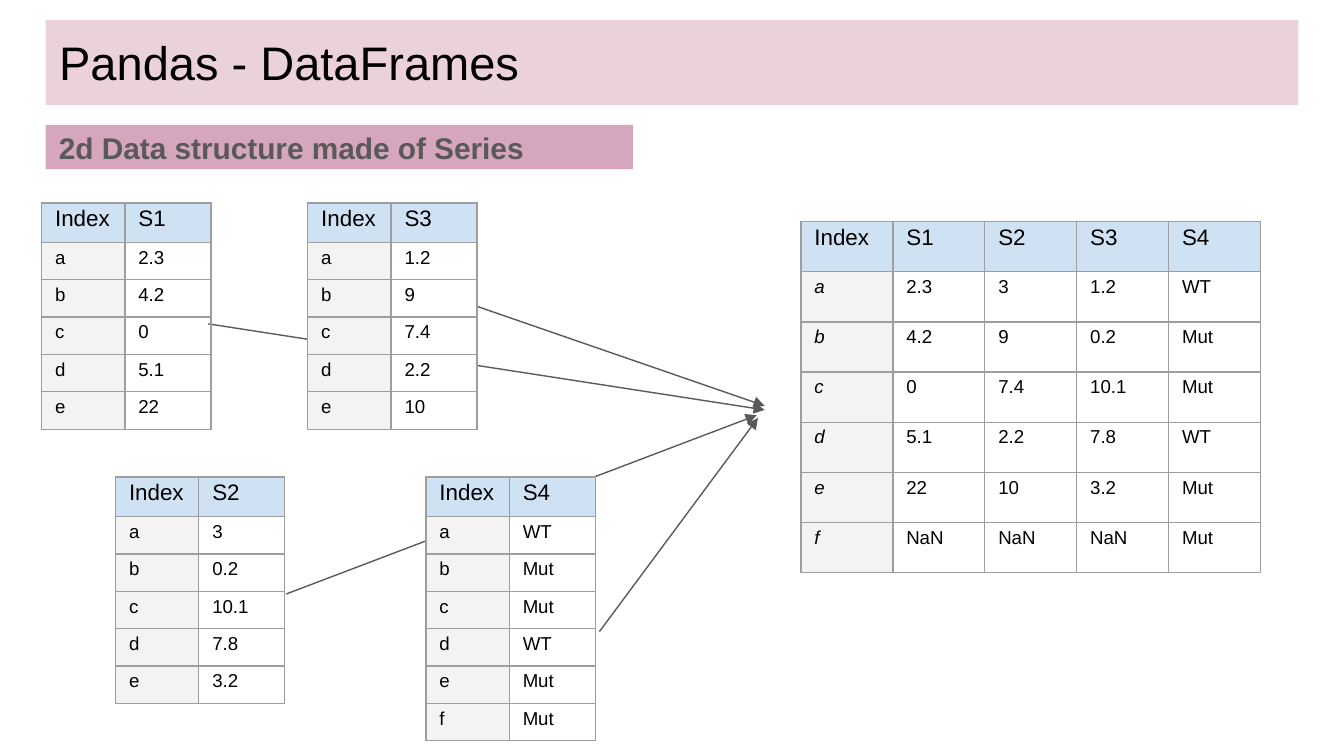
"""Build a slide showing how four Series combine into a DataFrame."""
from dataclasses import dataclass

from lxml import etree
from pptx import Presentation
from pptx.dml.color import RGBColor
from pptx.enum import shapes, text
from pptx.oxml import ns
from pptx.util import Inches, Pt


@dataclass(frozen=True)
class Theme:
    """Colours, font and type sizes of the slide."""
    font: str = "Arial"
    ink: str = "000000"
    grey: str = "595959"
    title_band: str = "EAD1DC"
    subtitle_band: str = "D5A6BD"
    header: str = "CFE2F3"
    index: str = "F3F3F3"
    value: str = "FFFFFF"
    border: str = "9E9E9E"
    title_size: float = 25.2
    subtitle_size: float = 16
    header_size: float = 12
    value_size: float = 10
    line_width: float = 0.75


@dataclass(frozen=True)
class Grid:
    """A table with its place, its column widths and its row heights."""
    left: float
    top: float
    rows: list[list[str]]
    widths: list[float]
    header_height: float
    row_height: float
    italic_index: bool = False
    opaque: bool = False


@dataclass(frozen=True)
class Arrow:
    """A straight arrow between two points."""
    start: tuple[float, float]
    end: tuple[float, float]


THEME = Theme()
LABELS = "abcdef"
SLIDE_WIDTH = 10
SLIDE_HEIGHT = SLIDE_WIDTH * 9 / 16
TITLE_BOX = (0.34, 0.15, 9.32, 0.63)
SUBTITLE_BOX = (0.34, 0.93, 4.37, 0.33)


def series(name: str, left: float, top: float, values: str, opaque: bool = False) -> Grid:
    """Describe a two-column Series table."""
    rows = [["Index", name], *map(list, zip(LABELS, values.split()))]
    return Grid(left, top, rows, [0.62, 0.64], 0.23, 0.21, opaque=opaque)


S1 = series("S1", 0.31, 1.51, "2.3 4.2 0 5.1 22")
S2 = series("S2", 0.86, 3.55, "3 0.2 10.1 7.8 3.2")
S3 = series("S3", 2.29, 1.51, "1.2 9 7.4 2.2 10", opaque=True)
S4 = series("S4", 3.17, 3.55, "WT Mut Mut WT Mut Mut", opaque=True)
FRAME = Grid(
    5.96, 1.65,
    [row.split() for row in (
        "Index S1 S2 S3 S4",
        "a 2.3 3 1.2 WT",
        "b 4.2 9 0.2 Mut",
        "c 0 7.4 10.1 Mut",
        "d 5.1 2.2 7.8 WT",
        "e 22 10 3.2 Mut",
        "f NaN NaN NaN Mut",
    )],
    [3.42 / 5] * 5, 2.61 / 7, 2.61 / 7, italic_index=True,
)
LAYERS = [
    Arrow((1.55, 2.41), (5.69, 3.05)),
    S1, S2, FRAME,
    Arrow((3.55, 2.28), (5.69, 3.02)),
    Arrow((2.13, 4.42), (5.63, 3.09)),
    Arrow((4.46, 4.7), (5.64, 3.11)),
    S4, S3,
]


def rgb(value: str) -> RGBColor:
    """Turn a hex string into a colour."""
    return RGBColor.from_string(value)


def style(paragraph, size: float, color: str, bold: bool = False, italic: bool = False) -> None:
    """Format the runs of a paragraph."""
    for run in paragraph.runs:
        run.font.name = THEME.font
        run.font.size = Pt(size)
        run.font.bold = bold
        run.font.italic = italic
        run.font.color.rgb = rgb(color)


def fill_band(band, words: str, color: str, anchor) -> None:
    """Give a band its fill, its text and its inner margins."""
    band.fill.solid()
    band.fill.fore_color.rgb = rgb(color)
    frame = band.text_frame
    frame.text = words
    frame.word_wrap = True
    frame.auto_size = text.MSO_AUTO_SIZE.NONE
    frame.vertical_anchor = anchor
    frame.margin_left = frame.margin_right = Inches(0.1)
    frame.margin_top = frame.margin_bottom = Inches(0.1)
    frame.paragraphs[0].alignment = text.PP_ALIGN.LEFT


def add_borders(cell) -> None:
    """Draw a thin line on each side of a cell."""
    properties = cell._tc.get_or_add_tcPr()
    for side in ("lnL", "lnR", "lnT", "lnB"):
        line = etree.SubElement(properties, ns.qn(f"a:{side}"), w=str(Pt(THEME.line_width)))
        solid = etree.SubElement(line, ns.qn("a:solidFill"))
        etree.SubElement(solid, ns.qn("a:srgbClr"), val=THEME.border)


def fill_cell(cell, words: str, color: str | None, size: float, italic: bool) -> None:
    """Write and format one table cell."""
    add_borders(cell)
    if color:
        cell.fill.solid()
        cell.fill.fore_color.rgb = rgb(color)
    else:
        cell.fill.background()
    cell.margin_left = cell.margin_right = Inches(0.1)
    cell.margin_top = cell.margin_bottom = Inches(0.1)
    cell.text_frame.text = words
    paragraph = cell.text_frame.paragraphs[0]
    paragraph.line_spacing = 0.5
    style(paragraph, size, THEME.ink, italic=italic)


def draw_grid(slide, grid: Grid) -> None:
    """Draw a table with a header row and an index column."""
    heights = [grid.header_height] + [grid.row_height] * (len(grid.rows) - 1)
    table = slide.shapes.add_table(
        len(heights), len(grid.widths), Inches(grid.left), Inches(grid.top),
        Inches(sum(grid.widths)), Inches(sum(heights))).table
    table.first_row = table.horz_banding = False
    value_color = THEME.value if grid.opaque else None
    for column, width in zip(table.columns, grid.widths):
        column.width = Inches(width)
    for r, (row, height) in enumerate(zip(grid.rows, heights)):
        table.rows[r].height = Inches(height)
        for c, words in enumerate(row):
            color = THEME.header if r == 0 else THEME.index if c == 0 else value_color
            size = THEME.header_size if r == 0 else THEME.value_size
            italic = grid.italic_index and r > 0 and c == 0
            fill_cell(table.cell(r, c), words, color, size, italic)


def draw_arrow(slide, arrow: Arrow) -> None:
    """Draw a connector with a triangle at its end."""
    connector = slide.shapes.add_connector(
        shapes.MSO_CONNECTOR.STRAIGHT, *map(Inches, arrow.start + arrow.end))
    connector.line.color.rgb = rgb(THEME.grey)
    connector.line.width = Pt(THEME.line_width)
    etree.SubElement(connector.line._get_or_add_ln(), ns.qn("a:tailEnd"), type="triangle")
    etree.SubElement(connector._element.spPr, ns.qn("a:effectLst"))


def main() -> None:
    """Build and save the presentation."""
    deck = Presentation()
    deck.slide_width, deck.slide_height = Inches(SLIDE_WIDTH), Inches(SLIDE_HEIGHT)
    slide = deck.slides.add_slide(deck.slide_layouts[5])

    title = slide.shapes.title
    title.left, title.top, title.width, title.height = map(Inches, TITLE_BOX)
    fill_band(title, "Pandas - DataFrames", THEME.title_band, text.MSO_ANCHOR.TOP)
    style(title.text_frame.paragraphs[0], THEME.title_size, THEME.ink)

    subtitle = slide.shapes.add_shape(shapes.MSO_SHAPE.RECTANGLE, *map(Inches, SUBTITLE_BOX))
    subtitle.shadow.inherit = False
    subtitle.line.fill.background()
    fill_band(subtitle, "2d Data structure made of Series", THEME.subtitle_band,
              text.MSO_ANCHOR.MIDDLE)
    style(subtitle.text_frame.paragraphs[0], THEME.subtitle_size, THEME.grey, bold=True)

    for layer in LAYERS:
        if isinstance(layer, Grid):
            draw_grid(slide, layer)
        else:
            draw_arrow(slide, layer)
    deck.save("out.pptx")


if __name__ == "__main__":
    main()
